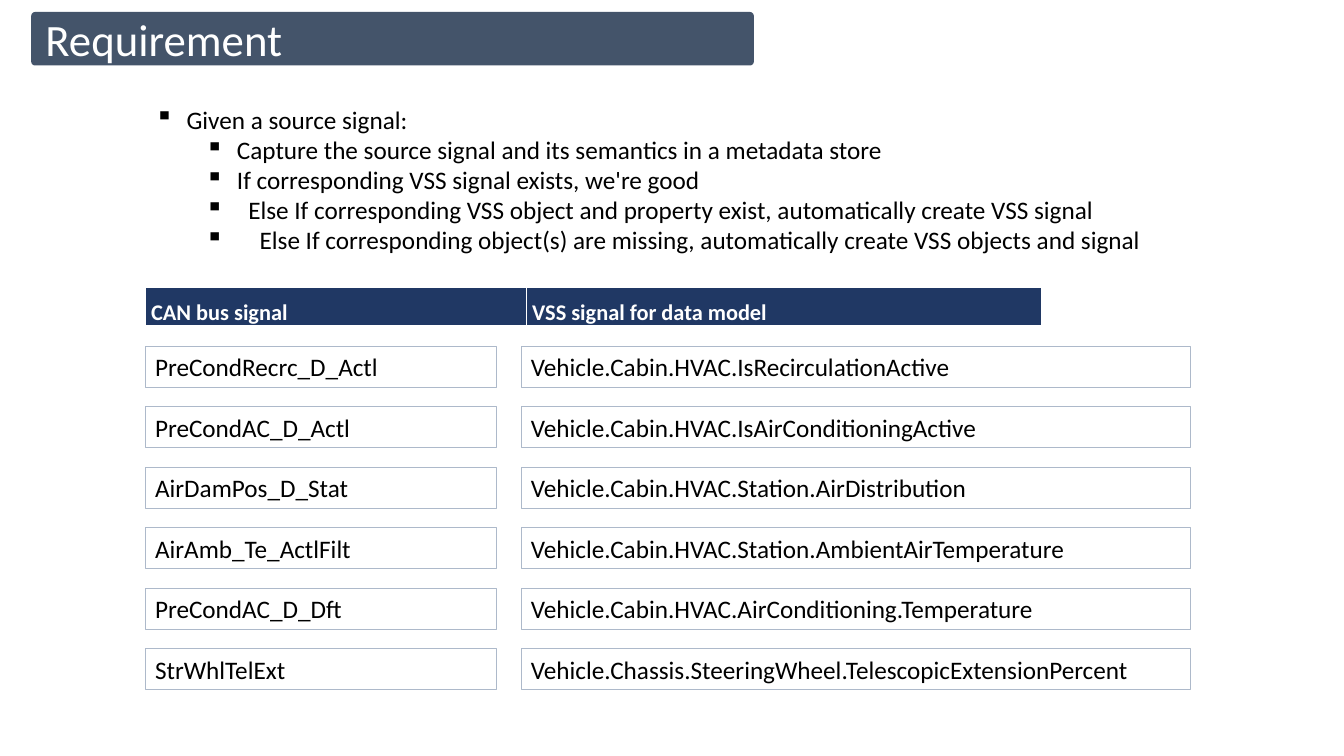
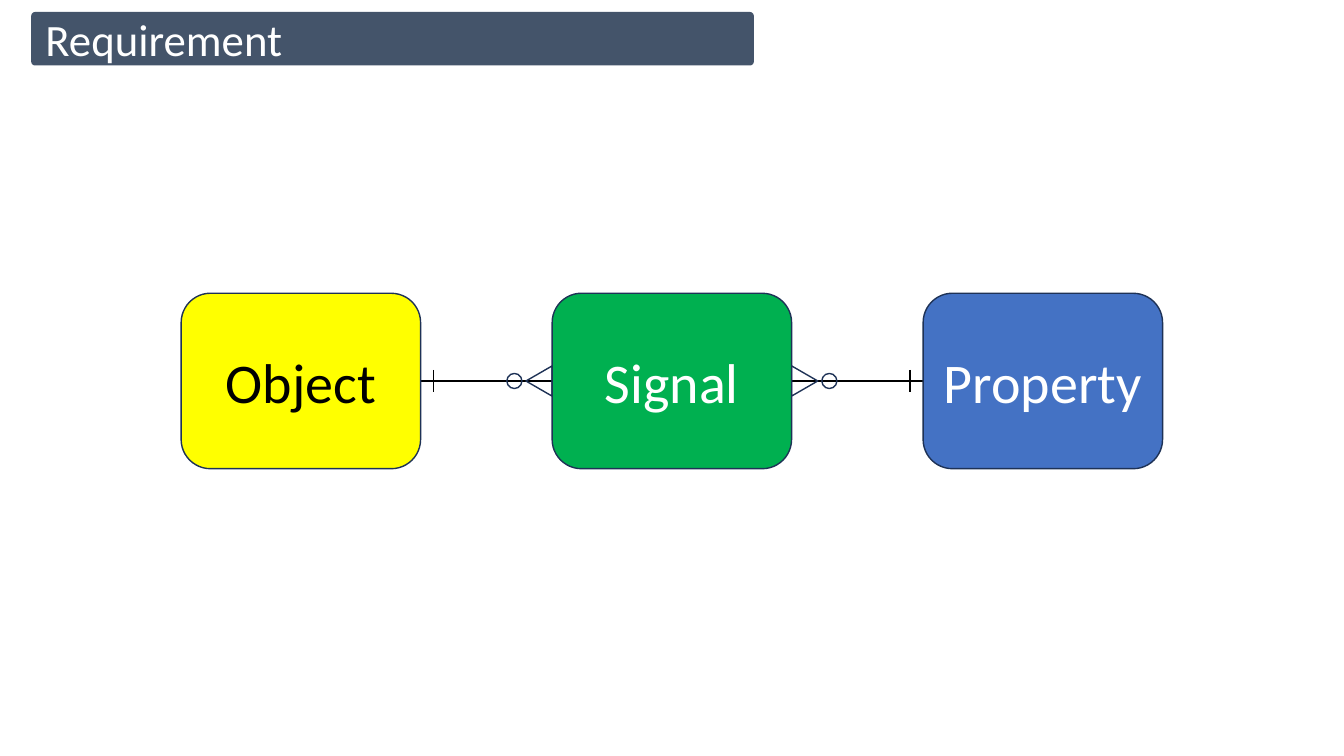
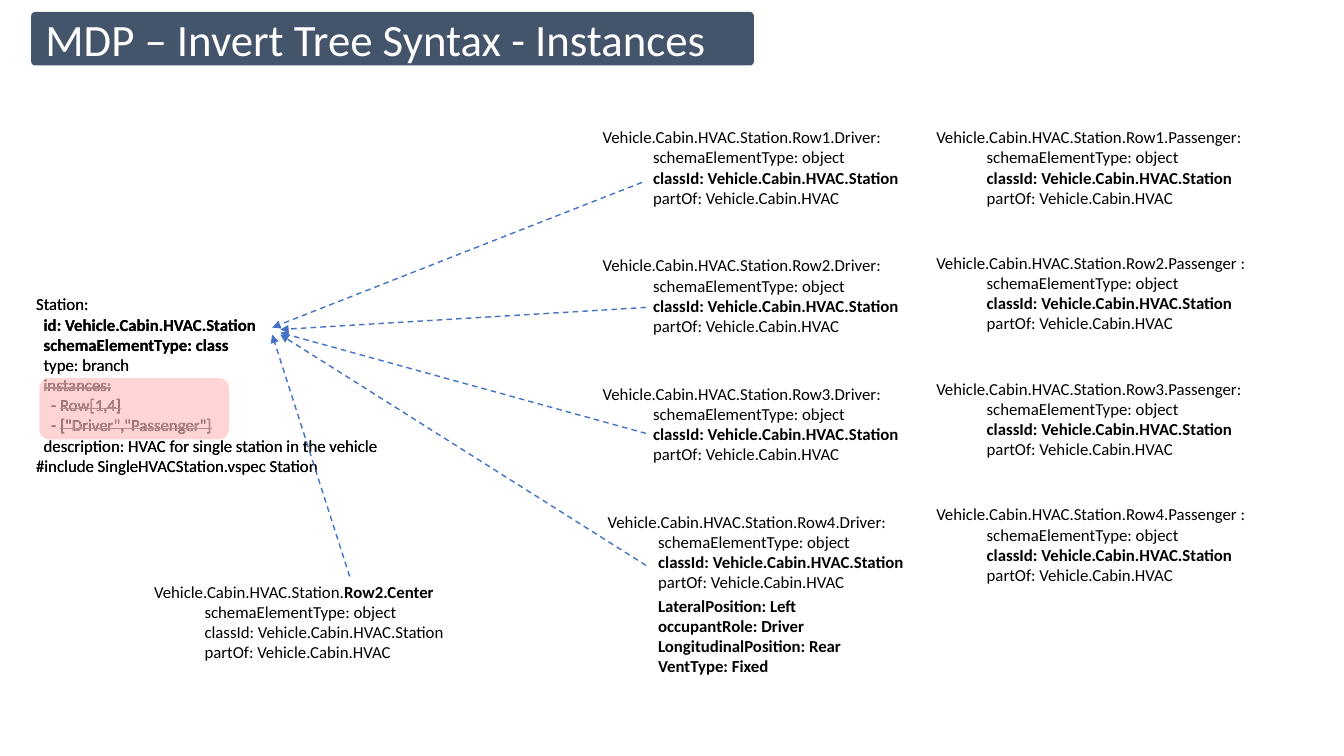
from dataclasses import dataclass

from lxml.etree import SubElement
from pptx import Presentation
from pptx.dml.color import RGBColor
from pptx.enum.dml import MSO_LINE
from pptx.enum.shapes import MSO_CONNECTOR, MSO_SHAPE
from pptx.enum.text import MSO_ANCHOR, MSO_AUTO_SIZE, PP_ALIGN
from pptx.oxml.ns import qn
from pptx.util import Pt

FONT = "Calibri"
BLACK, WHITE, GREY = "000000", "FFFFFF", "A6A6A6"
SLATE, NAVY, OUTLINE = "44546A", "203864", "1E3256"
PALE_BLUE, BLUE, RED = "ADB9CA", "4472C4", "FF0000"
YELLOW, GREEN = "FFFF00", "00B050"


@dataclass
class Line:
    """One paragraph; lead is plain text placed before the styled text."""
    text: str
    left: float = 0
    hanging: float = 0
    bullet: str = ""
    lead: str = ""
    bold: bool = False
    struck: bool = False


@dataclass
class Entity:
    name: str
    fill: str
    ink: str


@dataclass
class Instance:
    left: float
    top: float
    lines: list[Line]


def colour(value: str) -> RGBColor:
    return RGBColor.from_string(value)


def write(frame, lines: list[Line], size: float, ink: str = BLACK, align=PP_ALIGN.LEFT) -> None:
    frame.word_wrap = True
    for number, line in enumerate(lines):
        para = frame.add_paragraph() if number else frame.paragraphs[0]
        para.alignment = align
        if line.left:
            properties = para._p.get_or_add_pPr()
            properties.set("marL", str(Pt(line.left)))
            properties.set("indent", str(Pt(-line.hanging)))
        if line.bullet:
            SubElement(properties, qn("a:buChar")).set("char", line.bullet)
        para.font.name = FONT
        para.font.size = Pt(size)
        para.font.color.rgb = colour(GREY if line.struck else ink)
        if line.lead:
            para.add_run().text = line.lead
        span = para.add_run()
        span.text = line.text
        if line.bold:
            span.font.bold = True
        if line.struck:
            span._r.get_or_add_rPr().set("strike", "sngStrike")


def add_text(page, left: float, top: float, width: float, height: float,
             lines: list[Line], size: float):
    box = page.shapes.add_textbox(Pt(left), Pt(top), Pt(width), Pt(height))
    write(box.text_frame, lines, size)
    box.text_frame.auto_size = MSO_AUTO_SIZE.SHAPE_TO_FIT_TEXT
    return box


def add_shape(page, kind, left: float, top: float, width: float, height: float,
              fill: str = "", line: str = ""):
    shape = page.shapes.add_shape(kind, Pt(left), Pt(top), Pt(width), Pt(height))
    shape.shadow.inherit = False
    if fill:
        shape.fill.solid()
        shape.fill.fore_color.rgb = colour(fill)
    else:
        shape.fill.background()
    if line:
        shape.line.color.rgb = colour(line)
        shape.line.width = Pt(1)
    else:
        shape.line.fill.background()
    return shape


def add_line(page, start: tuple[float, float], end: tuple[float, float], ink: str = BLACK):
    line = page.shapes.add_connector(MSO_CONNECTOR.STRAIGHT, *map(Pt, start + end))
    line.line.color.rgb = colour(ink)
    line.line.width = Pt(1)
    SubElement(line._element.spPr, qn("a:effectLst"))
    return line


def add_dashed_arrow(page, start: tuple[float, float], end: tuple[float, float]) -> None:
    arrow = add_line(page, start, end, BLUE)
    arrow.line.dash_style = MSO_LINE.DASH
    SubElement(arrow.line._get_or_add_ln(), qn("a:tailEnd")).set("type", "triangle")


def add_page(deck, title: str):
    """Add a blank slide with the title band."""
    page = deck.slides.add_slide(deck.slide_layouts[6])
    band = add_shape(page, MSO_SHAPE.ROUNDED_RECTANGLE, 22.3, 8.6, 516.2, 38.2, SLATE)
    band.adjustments[0] = 0.07
    frame = band.text_frame
    frame.margin_left = frame.margin_right = frame.margin_top = frame.margin_bottom = Pt(9.4)
    frame.vertical_anchor = MSO_ANCHOR.MIDDLE
    write(frame, [Line(title)], 32, WHITE)
    return page


def add_header_table(page, left: float, top: float, height: float,
                     columns: dict[str, float]) -> None:
    table = page.shapes.add_table(1, len(columns), Pt(left), Pt(top),
                                  Pt(sum(columns.values())), Pt(height)).table
    table.first_row = table.horz_banding = False
    table.rows[0].height = Pt(height)
    for number, (heading, width) in enumerate(columns.items()):
        table.columns[number].width = Pt(width)
        cell = table.cell(0, number)
        cell.margin_left, cell.margin_right = Pt(4.3), Pt(0.7)
        cell.margin_top, cell.margin_bottom = Pt(0.7), Pt(0)
        cell.vertical_anchor = MSO_ANCHOR.BOTTOM
        for side, thickness in {"lnL": 1, "lnR": 1, "lnT": 1, "lnB": 3}.items():
            border = SubElement(cell._tc.get_or_add_tcPr(), qn(f"a:{side}"))
            border.set("w", str(Pt(thickness)))
            SubElement(SubElement(border, qn("a:solidFill")), qn("a:srgbClr")).set("val", WHITE)
        cell.fill.solid()
        cell.fill.fore_color.rgb = colour(NAVY)
        write(cell.text_frame, [Line(heading, bold=True)], 16, WHITE)


def add_signal_page(deck) -> None:
    page = add_page(deck, "Requirement")
    left, second_left = 103.7, 372.2
    add_header_table(page, left, 205.2, 28.1,
                     {"CAN bus signal": 272.2, "VSS signal for data model": 367.9})
    signals = {
        "PreCondRecrc_D_Actl": "Vehicle.Cabin.HVAC.IsRecirculationActive",
        "PreCondAC_D_Actl": "Vehicle.Cabin.HVAC.IsAirConditioningActive",
        "AirDamPos_D_Stat": "Vehicle.Cabin.HVAC.Station.AirDistribution",
        "AirAmb_Te_ActlFilt": "Vehicle.Cabin.HVAC.Station.AmbientAirTemperature",
        "PreCondAC_D_Dft": "Vehicle.Cabin.HVAC.AirConditioning.Temperature",
        "StrWhlTelExt": "Vehicle.Chassis.SteeringWheel.TelescopicExtensionPercent",
    }
    for row, (source, target) in enumerate(signals.items()):
        top = 247.5 + 43.2 * row
        for text, box_left, width in ((source, left, 251.3), (target, second_left, 478.1)):
            box = add_text(page, box_left, top, width, 29.1, [Line(text)], 18)
            box.line.color.rgb = colour(PALE_BLUE)
            box.line.width = Pt(0.75)

    steps = [
        ("Given a source signal:", 0, 0),
        ("Capture the source signal and its semantics in a metadata store", 36, 0),
        ("If corresponding VSS signal exists, we're good", 36, 0),
        ("Else If corresponding VSS object and property exist, "
         "automatically create VSS signal", 36, 8.1),
        ("Else If corresponding object(s) are missing, "
         "automatically create VSS objects and signal", 36, 16.2),
    ]
    lines = [Line(text, 22.5 + indent + offset, 22.5 + offset, "▪")
             for text, indent, offset in steps]
    add_text(page, left, 70.6, 804.2, 116.6, lines, 18)


def add_one_to_many(page, one: float, many: float, middle: float) -> None:
    """Join two entity edges with a bar at the one end and a crow's foot at the many end."""
    way = 1 if many > one else -1
    add_line(page, (one, middle), (many, middle))
    bar = one + 9.3 * way
    add_line(page, (bar, middle - 7.9), (bar, middle + 7.9))
    foot_width, foot_length, ring = 21.6, 18.7, 10.8
    foot = add_shape(page, MSO_SHAPE.ISOSCELES_TRIANGLE,
                     many - way * foot_length / 2 - foot_width / 2, middle - foot_length / 2,
                     foot_width, foot_length, line=OUTLINE)
    foot.rotation = -90 * way
    add_shape(page, MSO_SHAPE.OVAL, many - 27 * way - ring / 2, middle - ring / 2,
              ring, ring, line=OUTLINE)


def add_entity_page(deck) -> None:
    page = add_page(deck, "Requirement")
    left, top, width, height, pitch = 129.4, 209.5, 171, 125.3, 265
    middle = top + height / 2
    signal_left, property_left = left + pitch, left + 2 * pitch
    add_one_to_many(page, property_left, signal_left + width, middle)
    add_one_to_many(page, left + width, signal_left, middle)
    entities = [Entity("Object", YELLOW, BLACK), Entity("Signal", GREEN, WHITE),
                Entity("Property", BLUE, WHITE)]
    for number, entity in enumerate(entities):
        box = add_shape(page, MSO_SHAPE.ROUNDED_RECTANGLE, left + pitch * number, top,
                        width, height, entity.fill, OUTLINE)
        box.text_frame.vertical_anchor = MSO_ANCHOR.MIDDLE
        write(box.text_frame, [Line(entity.name)], 40, entity.ink, PP_ALIGN.CENTER)


def instance_lines(heading: Line, bold_class: bool = True) -> list[Line]:
    return [heading,
            Line("schemaElementType: object", 36),
            Line("classId: Vehicle.Cabin.HVAC.Station", 36, bold=bold_class),
            Line("partOf: Vehicle.Cabin.HVAC", 36)]


def station_lines(struck: bool) -> list[Line]:
    return [
        Line("Station:"),
        Line("id: Vehicle.Cabin.HVAC.Station", 5.4, bold=True),
        Line("schemaElementType: class", 5.4, bold=True),
        Line("type: branch", 5.4),
        Line("instances:", 5.4, struck=struck),
        Line("Row[1,4]", 10.8, lead="- ", struck=struck),
        Line('["Driver","Passenger"]', 10.8, lead="- ", struck=struck),
        Line("description: HVAC for single station in the vehicle", 5.4),
        Line("#include SingleHVACStation.vspec Station"),
    ]


def add_instance_page(deck) -> None:
    page = add_page(deck, "MDP – Invert Tree Syntax - Instances")
    for struck in (False, True):
        add_text(page, 18.7, 206.6, 261.4, 138.2, station_lines(struck), 12)

    station = "Vehicle.Cabin.HVAC.Station."
    driver_left, last_driver_left, passenger_left = 423.4, 427, 661.7
    instances = []
    for row in range(4):
        instances.append(Instance(last_driver_left if row == 3 else driver_left, 87.1 + 91.6 * row,
                                  instance_lines(Line(f"{station}Row{row + 1}.Driver:"))))
        colon = " :" if row % 2 else ":"
        instances.append(Instance(passenger_left, 87.1 + 89.8 * row,
                                  instance_lines(Line(f"{station}Row{row + 1}.Passenger{colon}"))))
    center = Line("Row2.Center", lead=station, bold=True)
    instances.append(Instance(103, 411.8, instance_lines(center, bold_class=False)))
    details = ["LateralPosition: Left", "occupantRole: Driver",
               "LongitudinalPosition: Rear", "VentType: Fixed"]
    instances.append(Instance(last_driver_left, 421.9,
                              [Line(text, 36, bold=True) for text in details]))
    for instance in instances:
        add_text(page, instance.left, instance.top, 240, 65.4, instance.lines, 12)

    arrows = [
        ((458.6, 130.3), (194.4, 234)),
        ((461.5, 219.6), (200.2, 235.4)),
        ((461.5, 309.6), (200.2, 237.6)),
        ((461.5, 403.9), (200.2, 239)),
        ((249.8, 411.8), (194.4, 239)),
    ]
    for start, end in arrows:
        add_dashed_arrow(page, start, end)

    highlight = add_shape(page, MSO_SHAPE.ROUNDED_RECTANGLE, 28.1, 270, 135.4, 43.9, RED)
    tint = highlight._element.spPr.find(f".//{qn('a:srgbClr')}")
    SubElement(tint, qn("a:alpha")).set("val", "17000")


def main() -> None:
    deck = Presentation()
    deck.slide_width, deck.slide_height = Pt(960), Pt(540)
    add_signal_page(deck)
    add_entity_page(deck)
    add_instance_page(deck)
    deck.save("out.pptx")


if __name__ == "__main__":
    main()
